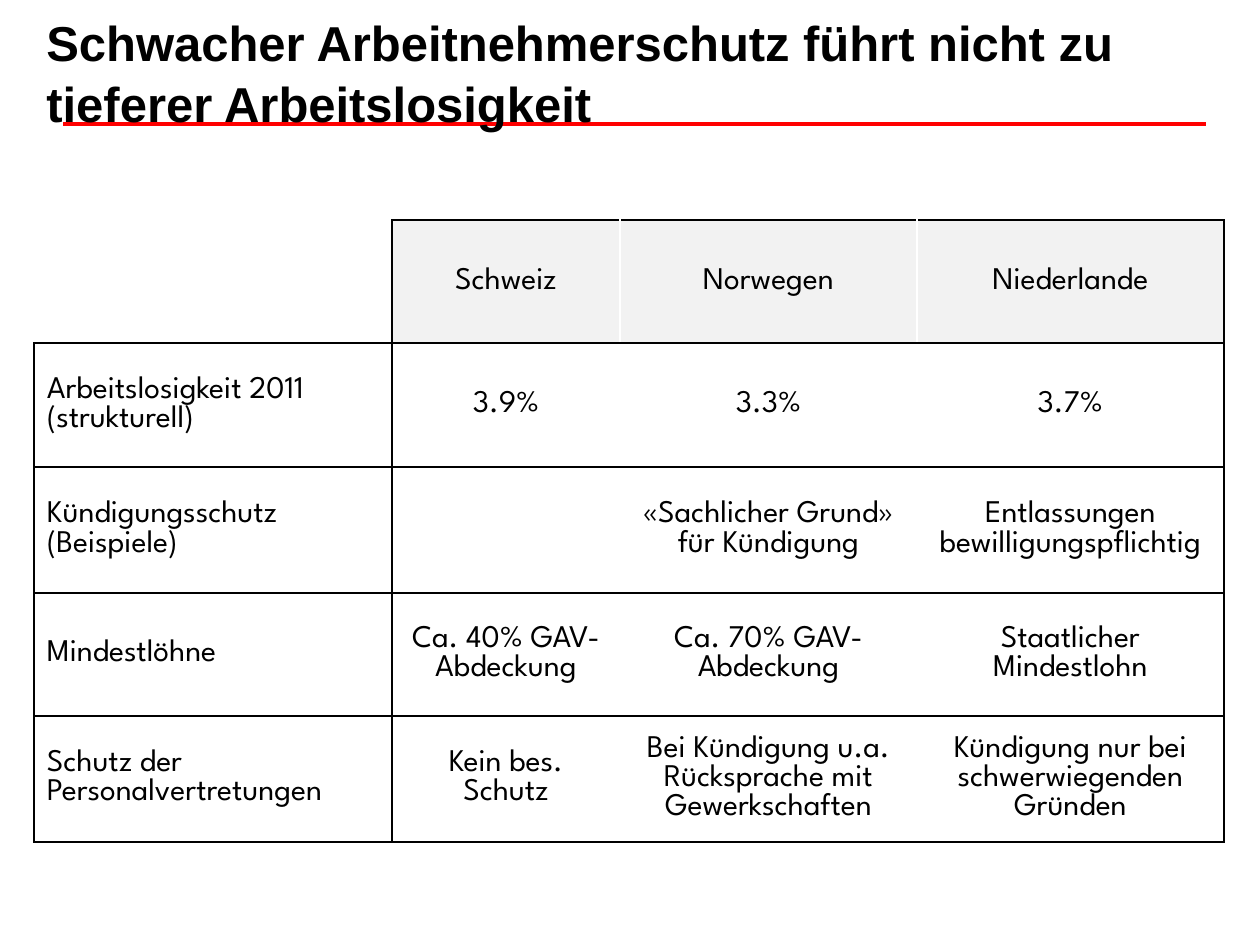
from dataclasses import dataclass

from lxml import etree
from pptx import Presentation
from pptx import util as u
from pptx.dml.color import RGBColor
from pptx.enum import shapes, text
from pptx.oxml.ns import qn

SCALE = 914400 / 126
BLACK, WHITE, RED, GREY = "000000", "FFFFFF", "FF0000", "F2F2F2"
COLS = [358, 228, 297, 307]
ROWS = [123, 124, 126, 123, 126]
INSETS = {"margin_left": 13, "margin_right": 13, "margin_top": 6, "margin_bottom": 6}


@dataclass
class Row:
    label: str
    schweiz: str
    norwegen: str
    niederlande: str

    def values(self) -> list[str]:
        return [self.label, self.schweiz, self.norwegen, self.niederlande]


TABLE = [
    Row("", "Schweiz", "Norwegen", "Niederlande"),
    Row("Arbeitslosigkeit 2011\v(strukturell)", "3.9%", "3.3%", "3.7%"),
    Row("Kündigungsschutz\n(Beispiele)", "", "«Sachlicher Grund» für Kündigung",
        "Entlassungen bewilligungspflichtig"),
    Row("Mindestlöhne", "Ca. 40% GAV-Abdeckung", "Ca. 70% GAV-Abdeckung",
        "Staatlicher Mindestlohn"),
    Row("Schutz der Personalvertretungen", "Kein bes. Schutz",
        "Bei Kündigung u.a. Rücksprache mit Gewerkschaften",
        "Kündigung nur bei schwerwiegenden Gründen"),
]


def px(n: int) -> int:
    return round(n * SCALE)


def rgb(value: str) -> RGBColor:
    return RGBColor.from_string(value)


def set_attrs(obj, values: dict) -> None:
    for name, value in values.items():
        setattr(obj, name, value)


def format_text(tf, name: str, size: int, bold: bool, align, spacing: float = 1.0) -> None:
    for p in tf.paragraphs:
        set_attrs(p, {"alignment": align, "line_spacing": spacing})
        for r in p.runs:
            set_attrs(r.font, {"name": name, "size": u.Pt(size), "bold": bold})
            r.font.color.rgb = rgb(BLACK)


def add_rule(s, x1: int, x2: int, y: int) -> None:
    c = s.shapes.add_connector(shapes.MSO_CONNECTOR.STRAIGHT, px(x1), px(y), px(x2), px(y))
    c.line.color.rgb = rgb(RED)
    c.line.width = u.Pt(2.5)
    etree.SubElement(c._element.spPr, qn("a:effectLst"))


def add_title(s, words: str) -> None:
    sp = s.shapes.add_textbox(px(34), px(37), px(1163), px(68))
    tf = sp.text_frame
    set_attrs(tf, {"word_wrap": True, "vertical_anchor": text.MSO_ANCHOR.MIDDLE})
    tf.text = words
    format_text(tf, "Arial", 28, True, text.PP_ALIGN.LEFT, 1.05)


def add_border(cell, side: str, color: str) -> None:
    ln = etree.SubElement(cell._tc.get_or_add_tcPr(), qn(f"a:ln{side}"), w=str(u.Pt(1)))
    fill = etree.SubElement(ln, qn("a:solidFill"))
    etree.SubElement(fill, qn("a:srgbClr"), val=color)


def format_cell(cell, row: int, col: int, words: str) -> None:
    corner = row == 0 and col == 0
    black_sides = {
        "L": col < 2 and not corner,
        "R": col in (0, len(COLS) - 1),
        "T": not corner,
        "B": True,
    }
    for side, black in black_sides.items():
        add_border(cell, side, BLACK if black else WHITE)
    if row == 0 and not corner:
        cell.fill.solid()
        cell.fill.fore_color.rgb = rgb(GREY)
    else:
        cell.fill.background()
    set_attrs(cell, {name: px(n) for name, n in INSETS.items()})
    cell.vertical_anchor = text.MSO_ANCHOR.MIDDLE
    cell.text_frame.text = words
    align = text.PP_ALIGN.CENTER if col else text.PP_ALIGN.LEFT
    format_text(cell.text_frame, "League Spartan", 18, False, align)


def add_comparison(s) -> None:
    table = s.shapes.add_table(len(ROWS), len(COLS), px(34), px(220),
                               px(sum(COLS)), px(sum(ROWS))).table
    set_attrs(table, {"first_row": False, "horz_banding": False})
    for column, width in zip(table.columns, COLS):
        column.width = px(width)
    for i, (height, row) in enumerate(zip(ROWS, TABLE)):
        table.rows[i].height = px(height)
        for j, words in enumerate(row.values()):
            format_cell(table.cell(i, j), i, j, words)


def main() -> None:
    prs = Presentation()
    set_attrs(prs, {"slide_width": px(1260), "slide_height": px(945)})
    s = prs.slides.add_slide(prs.slide_layouts[6])
    add_rule(s, 63, 1206, 124)
    add_title(s, "Schwacher Arbeitnehmerschutz führt nicht zu tieferer Arbeitslosigkeit")
    add_comparison(s)
    prs.save("out.pptx")


if __name__ == "__main__":
    main()
